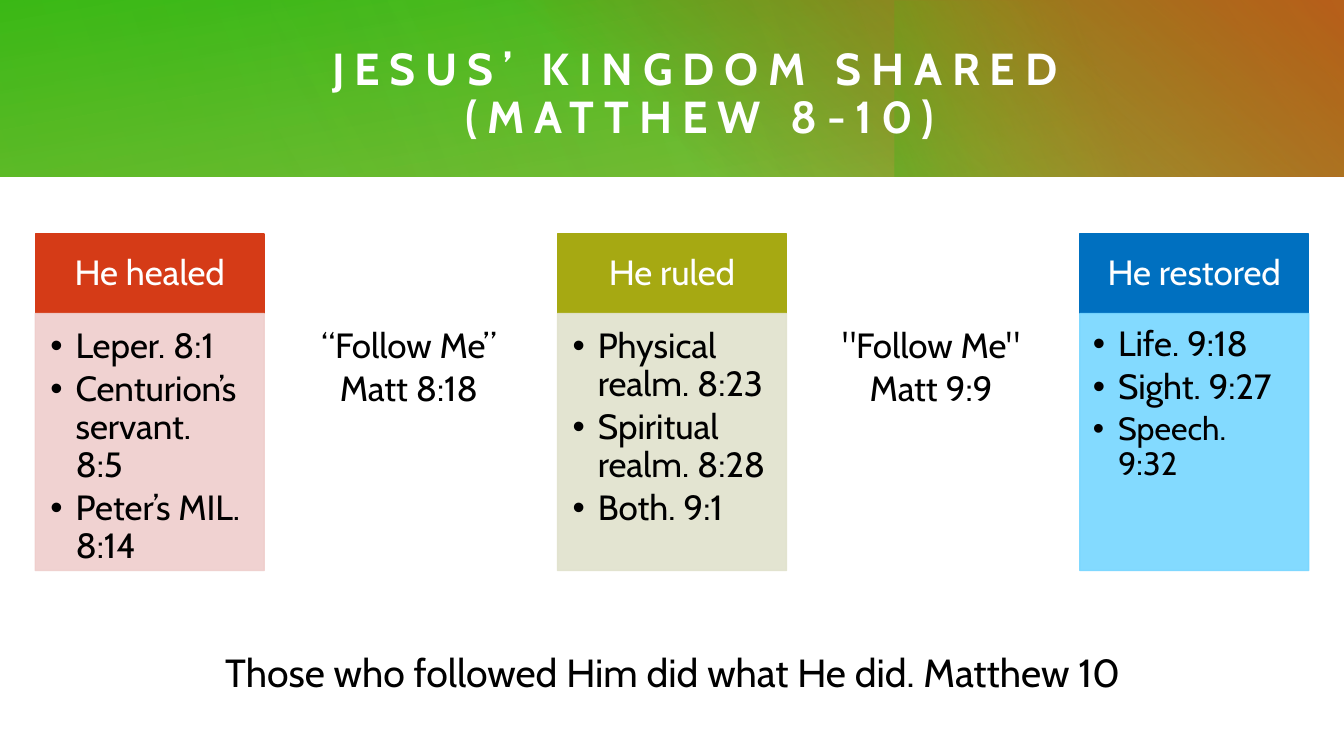
from lxml import etree
from pptx import Presentation
from pptx.dml.color import RGBColor as RGB
from pptx.enum.shapes import MSO_SHAPE as SHAPE
from pptx.enum.text import MSO_ANCHOR as ANCHOR, PP_ALIGN as ALIGN
from pptx.oxml.ns import qn
from pptx.util import Inches, Pt

WHITE = RGB(0xFF, 0xFF, 0xFF)
BLACK = RGB(0, 0, 0)
RED = RGB(0xD5, 0x3B, 0x17)
OLIVE = RGB(0xA6, 0xA9, 0x12)
BLUE = RGB(0x00, 0x70, 0xC0)
PINK = RGB(0xEF, 0xCE, 0xCC)
SAND = RGB(0xE1, 0xE2, 0xCC)
SKY = RGB(0x76, 0xD6, 0xFF)
GREEN = RGB(0x2D, 0xBB, 0x14)
LIME = RGB(0x73, 0xB3, 0x20)

WIDE, HIGH = 13.33, 7.5
HEAD, BODY = 0.79, 2.55
CELL = (0.15, 0.15, 0.19, 0.22)

# box, rotation, angle, then (position, colour, opacity) for both stops
LAYERS = [
    ((0, 0, WIDE, 1.75), 0, 260, (0, LIME, 83), (100, GREEN, 100)),
    ((4.81, 0, 8.52, 1.75), 0, 310, (22, RED, 0), (99, RED, 100)),
    ((9.87, -0.99, 1.75, 3.74), 270, 250, (45, OLIVE, 0), (99, GREEN, 33)),
    ((2.68, 0, 10.65, 1.75), 180, 330, (0, LIME, 30), (99, LIME, 0)),
    ((0, 0, 8.65, 1.75), 0, 340, (0, LIME, 21), (99, LIME, 0)),
]

# heading, its colour, body colour, items with sizes
CARDS = [
    ("He healed", RED, PINK,
     [("Leper. 8:1", 25), ("Centurion’s servant. 8:5", 25), ("Peter’s MIL. 8:14", 25)], CELL),
    ("He ruled", OLIVE, SAND,
     [("Physical realm. 8:23", 25), ("Spiritual realm. 8:28", 25), ("Both. 9:1", 25)], CELL),
    ("He restored", BLUE, SKY,
     [("Life. 9:18", 25), ("Sight. 9:27", 25), ("Speech. 9:32", 23)],
     (0.13, 0.13, 0.18, 0.2)),
]
CALLS = [["“Follow Me”", "Matt 8:18"], ['"Follow Me"', "Matt 9:9"]]


def fade(parent, levels):
    """Set the opacity, in percent, of each colour under the element."""
    for node, level in zip(parent.iter(qn("a:srgbClr")), levels):
        if level < 100:
            etree.SubElement(node, qn("a:alpha")).set("val", str(level * 1000))


def block(slide, box):
    shape = slide.shapes.add_shape(SHAPE.RECTANGLE, *map(Inches, box))
    shape.shadow.inherit = False
    shape.line.fill.background()
    return shape


def panel(slide, box, color, level=100):
    shape = block(slide, box)
    shape.fill.solid()
    shape.fill.fore_color.rgb = color
    shape.line.color.rgb = color
    shape.line.width = Pt(1)
    fade(shape._element.spPr, [level, level])
    return shape


def write(shape, items, size=25, color=BLACK, align=ALIGN.CENTER, anchor=ANCHOR.TOP,
          inset=CELL, bold=False, track=0, bullet=False, lead=0.9, after=0):
    """Fill a shape with paragraphs; an item is a text or a (text, size) pair."""
    frame = shape.text_frame
    frame.word_wrap = True
    frame.vertical_anchor = anchor
    (frame.margin_left, frame.margin_top,
     frame.margin_right, frame.margin_bottom) = map(Inches, inset)
    for i, item in enumerate(items):
        text, points = item if isinstance(item, tuple) else (item, size)
        para = frame.paragraphs[0] if i == 0 else frame.add_paragraph()
        para.text = text
        para.alignment = align
        para.line_spacing = lead
        para.space_before = Pt(0)
        para.space_after = Pt(after)
        for run in para.runs:
            font = run.font
            font.name, font.size, font.bold = "Cabin", Pt(points), bold
            font.color.rgb = color
            if track:
                font._element.set("spc", str(track * 100))
        if bullet:
            props = para._p.get_or_add_pPr()
            props.set("marL", str(Inches(0.25)))
            props.set("indent", str(-Inches(0.25)))
            etree.SubElement(props, qn("a:buFont")).set("typeface", "Arial")
            etree.SubElement(props, qn("a:buChar")).set("char", "•")


def banner(slide):
    for box, turn, angle, *stops in LAYERS:
        shape = block(slide, box)
        shape.rotation = turn
        fill = shape.fill
        fill.gradient()
        fill.gradient_angle = 360 - angle
        for stop, (place, color, level) in zip(fill.gradient_stops, stops):
            stop.position = place / 100
            stop.color.rgb = color
        fade(shape._element.spPr, [level for *_, level in stops])
    title = slide.shapes.title
    title.left, title.top, title.width, title.height = map(Inches, (1.27, 0.41, 11.35, 1.06))
    write(title, ["JESUS’ KINGDOM SHARED\v(MATTHEW 8-10)"], size=32, color=WHITE,
          anchor=ANCHOR.MIDDLE, inset=(0, 0, 0, 0), bold=True, track=7)
    slide.shapes._spTree.append(title._element)


def card(slide, left, top, width, data):
    name, dark, light, items, inset = data
    write(panel(slide, (left, top, width, HEAD), dark), [name], color=WHITE,
          anchor=ANCHOR.MIDDLE, inset=(0.19, 0.11, 0.19, 0.11))
    write(panel(slide, (left, top + HEAD, width, BODY), light, 90), items,
          align=ALIGN.LEFT, inset=inset, bullet=True, after=3.75)


def note(slide, box, items, **style):
    write(slide.shapes.add_textbox(*map(Inches, box)), items, **style)


def columns(slide, left, top, width, step):
    """Place the cards in every other column and the calls between them."""
    for i, data in enumerate(CARDS):
        card(slide, left + 2 * i * step, top, width, data)
    for i, items in enumerate(CALLS):
        spot = left + (2 * i + 1) * step
        note(slide, (spot, top + HEAD, width, BODY), items, after=3.75)


def main():
    deck = Presentation()
    deck.slide_width, deck.slide_height = Inches(WIDE), Inches(HIGH)
    slide = deck.slides.add_slide(deck.slide_layouts[5])
    banner(slide)
    columns(slide, 0.35, 2.32, 2.27, 2.59)
    note(slide, (1.12, 6.38, 11.1, 0.57), ["Those who followed Him did what He did. Matthew 10"],
         size=28, inset=(0.1, 0.05, 0.1, 0.05), lead=1.0)
    deck.save("out.pptx")


if __name__ == "__main__":
    main()
